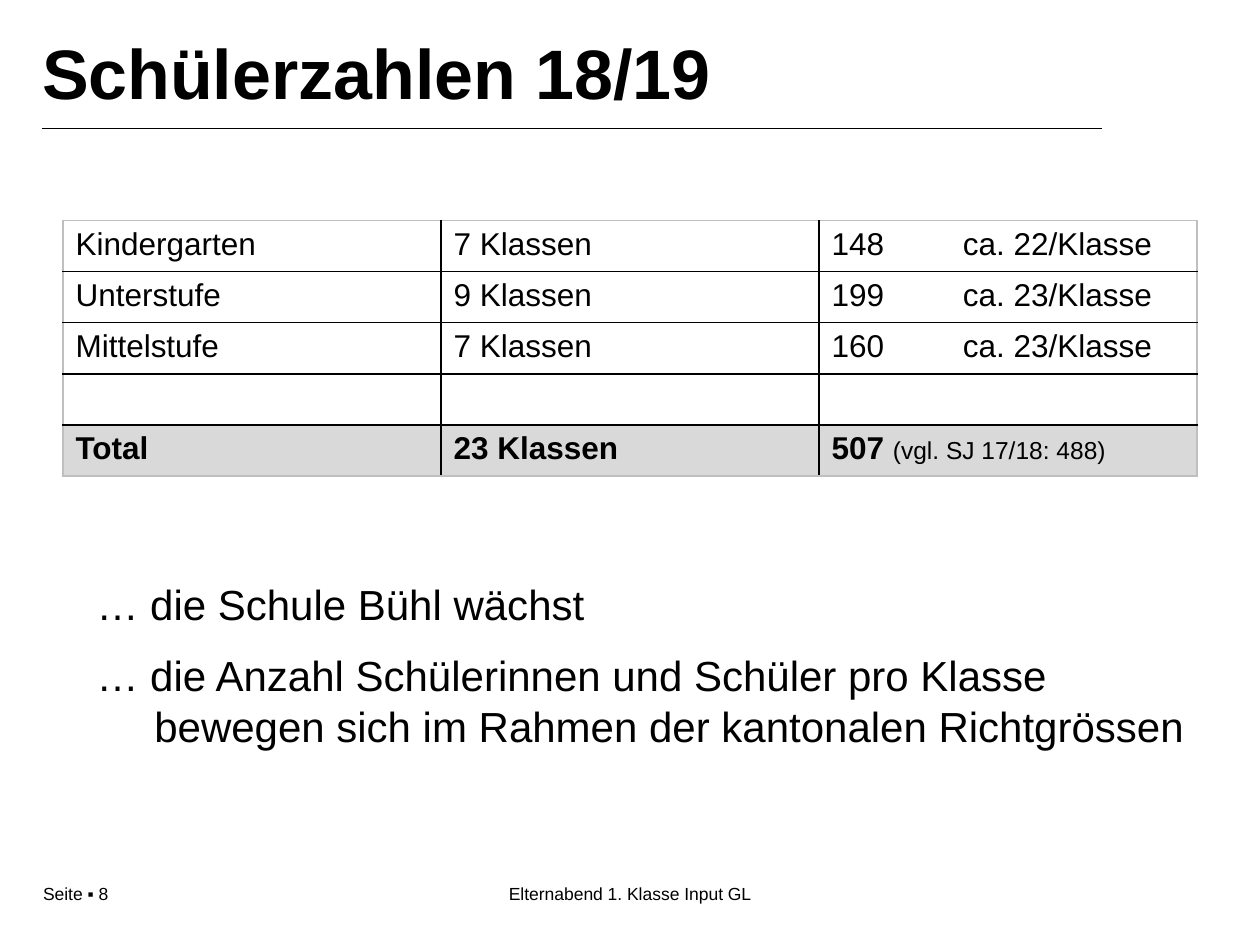
from dataclasses import dataclass

from lxml import etree
from pptx import Presentation
from pptx.dml.color import RGBColor
from pptx.enum import shapes, text as t
from pptx.oxml import ns
from pptx.util import Pt


@dataclass(frozen=True)
class Theme:
    font: str = "Arial"
    ink: str = "000000"
    edge: str = "BFBFBF"
    total: str = "D9D9D9"
    title: int = 40
    body: int = 24
    table: int = 18
    note: int = 14
    footer: int = 10


THEME = Theme()
ROWS = [
    ("Kindergarten", "7 Klassen", "148\tca. 22/Klasse"),
    ("Unterstufe", "9 Klassen", "199\tca. 23/Klasse"),
    ("Mittelstufe", "7 Klassen", "160\tca. 23/Klasse"),
    ("", "", ""),
    ("Total", "23 Klassen", "507 "),
]
TOTAL_NOTE = "(vgl. SJ 17/18: 488)"
# text, left indent, space before
REMARKS = [
    ("… die Schule Bühl wächst", 0, 0),
    ("… die Anzahl Schülerinnen und Schüler pro Klasse", 0, 12),
    ("bewegen sich im Rahmen der kantonalen Richtgrössen", 33, 0),
]


def add_xml(parent, tag, **attrs):
    return etree.SubElement(parent, ns.qn(tag), {k: str(v) for k, v in attrs.items()})


def add_text(p, content, size, bold=False, align=t.PP_ALIGN.LEFT):
    p.alignment = align
    r = p.add_run()
    r.text = content
    r.font.name = THEME.font
    r.font.size = Pt(size)
    r.font.bold = bold
    r.font.color.rgb = RGBColor.from_string(THEME.ink)
    return r


def place(sp, box):
    sp.left, sp.top, sp.width, sp.height = (Pt(v) for v in box)


def add_title(s, box, content):
    sp = s.shapes.title
    place(sp, box)
    tf = sp.text_frame
    tf.auto_size = t.MSO_AUTO_SIZE.NONE
    tf.vertical_anchor = t.MSO_ANCHOR.MIDDLE
    tf.margin_left = tf.margin_right = 0
    p = tf.paragraphs[0]
    p.line_spacing = 0.9
    add_text(p, content, THEME.title, bold=True)

    left, top, width, _ = box
    y = Pt(top + 69)
    rule = s.shapes.add_connector(shapes.MSO_CONNECTOR.STRAIGHT,
                                  Pt(left), y, Pt(left + width - 65.5), y)
    rule.line.color.rgb = RGBColor.from_string(THEME.ink)
    rule.line.width = Pt(0.75)
    add_xml(rule._element.spPr, "a:effectLst")


def set_borders(cell, colors):
    """Draw the left, right, top and bottom border in the given colours."""
    tc_pr = cell._tc.get_or_add_tcPr()
    for side, color in zip("LRTB", colors):
        ln = add_xml(tc_pr, f"a:ln{side}", w=Pt(1))
        add_xml(add_xml(ln, "a:solidFill"), "a:srgbClr", val=color)


def add_pupil_table(s, box):
    n_rows, n_cols = len(ROWS), len(ROWS[0])
    table = s.shapes.add_table(n_rows, n_cols, *(Pt(v) for v in box)).table
    table.first_row = table.horz_banding = False
    for i, row in enumerate(ROWS):
        is_total = i == n_rows - 1
        for j, content in enumerate(row):
            cell = table.cell(i, j)
            outer = (j == 0, j == n_cols - 1, i == 0, is_total)
            set_borders(cell, [THEME.edge if o else THEME.ink for o in outer])
            if is_total:
                cell.fill.solid()
                cell.fill.fore_color.rgb = RGBColor.from_string(THEME.total)
            else:
                cell.fill.background()
            p = cell.text_frame.paragraphs[0]
            if "\t" in content:
                tabs = add_xml(p._p.get_or_add_pPr(), "a:tabLst")
                add_xml(tabs, "a:tab", pos=Pt(75), algn="l")
            if content:
                add_text(p, content, THEME.table, bold=is_total)
            else:
                p.font.size = Pt(THEME.table)
    add_text(p, TOTAL_NOTE, THEME.note)


def add_remarks(s, box):
    sp = s.placeholders[1]
    place(sp, box)
    tf = sp.text_frame
    tf.auto_size = t.MSO_AUTO_SIZE.SHAPE_TO_FIT_TEXT
    for i, (content, indent, before) in enumerate(REMARKS):
        p = tf.add_paragraph() if i else tf.paragraphs[0]
        p_pr = p._p.get_or_add_pPr()
        p_pr.set("marL", str(Pt(indent)))
        p_pr.set("indent", "0")
        add_xml(p_pr, "a:buNone")
        p.space_before = Pt(before)
        add_text(p, content, THEME.body)


def add_footer(s, box, page, event):
    left, top, width, height = box
    parts = [(page, 0, 106, t.PP_ALIGN.LEFT),
             (event, (width - 228) / 2, 228, t.PP_ALIGN.CENTER)]
    for content, dx, w, align in parts:
        sp = s.shapes.add_textbox(Pt(left + dx), Pt(top), Pt(w), Pt(height))
        tf = sp.text_frame
        tf.word_wrap = True
        add_text(tf.paragraphs[0], content, THEME.footer, align=align)


def main():
    prs = Presentation()
    prs.slide_width, prs.slide_height = Pt(720), Pt(540)
    s = prs.slides.add_slide(prs.slide_layouts[1])
    add_title(s, (24, 4.5, 671, 78.5), "Schülerzahlen 18/19")
    add_pupil_table(s, (36, 126, 648, 146))
    add_remarks(s, (48, 327, 652.5, 106.5))
    add_footer(s, (17.5, 501, 685, 19.5), "Seite ▪ 8", "Elternabend 1. Klasse Input GL")
    prs.save("out.pptx")


if __name__ == "__main__":
    main()
